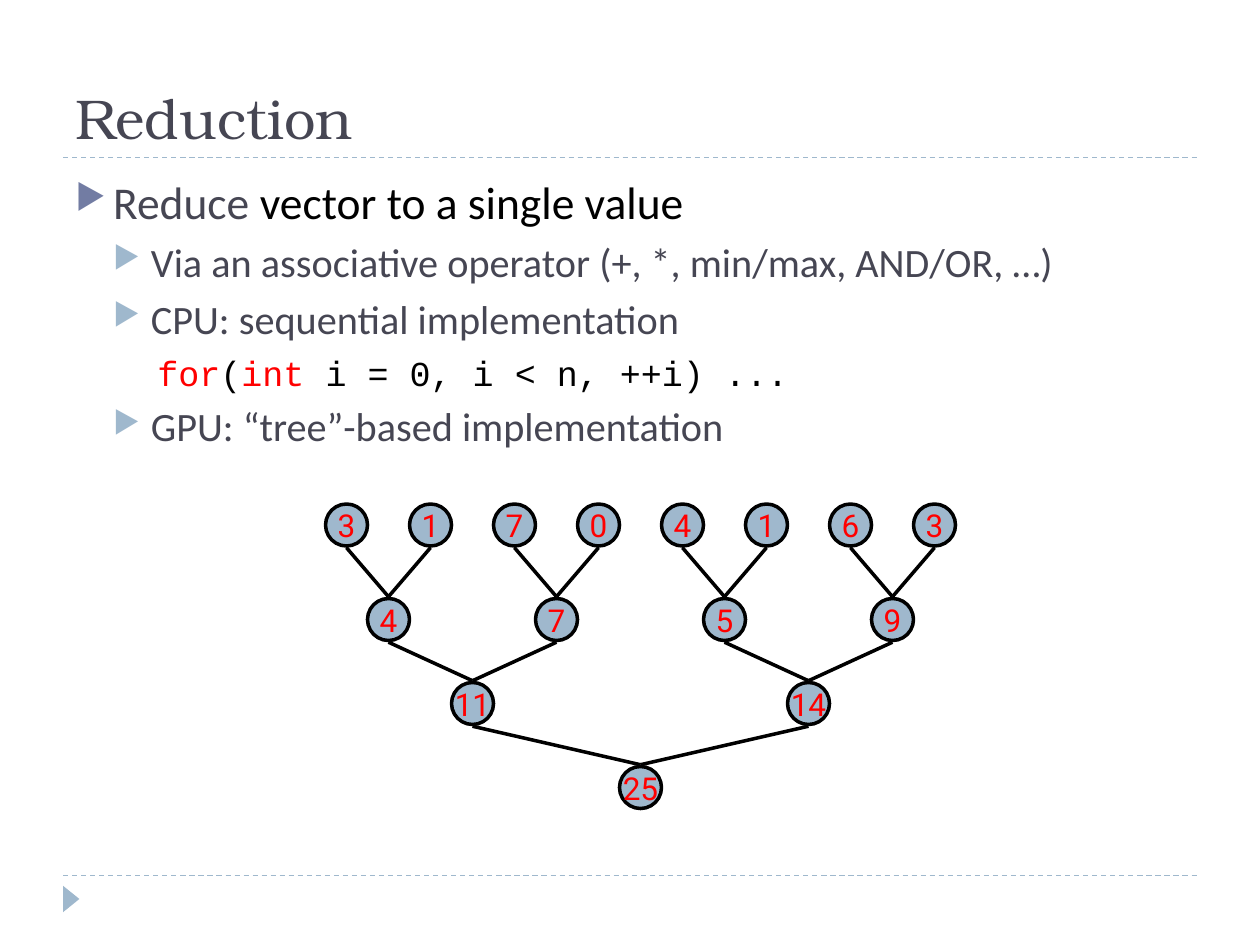
from dataclasses import dataclass
from typing import Optional

from lxml.etree import SubElement
from pptx import Presentation
from pptx.dml.color import RGBColor
from pptx.enum.dml import MSO_LINE
from pptx.enum.shapes import MSO_CONNECTOR, MSO_SHAPE
from pptx.enum.text import MSO_ANCHOR, MSO_AUTO_SIZE, PP_ALIGN
from pptx.oxml.ns import qn
from pptx.util import Pt


@dataclass(frozen=True)
class Theme:
    heading: str = "464653"
    ink: str = "000000"
    accent: str = "FF0000"
    bullet: str = "727CA3"
    pale: str = "9FB8CD"
    title_font: str = "TeX Gyre Bonum"
    body_font: str = "Calibri"
    code_font: str = "Courier New"
    node_font: str = "Roboto"
    title_size: float = 32
    level_sizes: tuple = (26, 23, 20)
    node_size: float = 18


THEME = Theme()


@dataclass(frozen=True)
class Line:
    """One paragraph of the body: (text, colour) runs at an outline level."""
    level: int
    runs: tuple
    left: float
    hanging: float
    space_before: float
    font: str = THEME.body_font
    bullet: Optional[str] = THEME.pale


@dataclass(frozen=True)
class TreeRow:
    top: float
    values: tuple
    preset: MSO_SHAPE = MSO_SHAPE.OVAL


def topic(text: str) -> Line:
    return Line(1, ((text, THEME.heading),), 43.2, 21.6, 5)


BODY = (
    Line(0, (("Reduce ", THEME.heading), ("vector to a single value", THEME.ink)),
         21.6, 21.6, 0, bullet=THEME.bullet),
    topic("Via an associative operator (+, *, min/max, AND/OR, …)"),
    topic("CPU: sequential implementation"),
    Line(2, (("for", THEME.accent), ("(", THEME.ink), ("int", THEME.accent),
             (" i = 0, i < n, ++i) ...", THEME.ink)),
         64.8, 18, 5, font=THEME.code_font, bullet=None),
    topic("GPU: “tree”-based implementation"),
)

TREE = (
    TreeRow(288, (3, 1, 7, 0, 4, 1, 6, 3), MSO_SHAPE.FLOWCHART_CONNECTOR),
    TreeRow(342, (4, 7, 5, 9)),
    TreeRow(390, (11, 14)),
    TreeRow(438, (25,)),
)
NODE = 24
FIRST_CENTER = 198
LEAF_STEP = 48
EDGE_GAP = 1


def style_font(font, name: str, size: float, color: str) -> None:
    for attribute, value in {"name": name, "size": Pt(size), "bold": False}.items():
        setattr(font, attribute, value)
    font.color.rgb = RGBColor.from_string(color)


def add_line(slide, start: tuple, end: tuple, color: str, width: float, dash=None) -> None:
    connector = slide.shapes.add_connector(
        MSO_CONNECTOR.STRAIGHT, *(Pt(value) for value in start + end))
    connector.line.color.rgb = RGBColor.from_string(color)
    connector.line.width = Pt(width)
    if dash is not None:
        connector.line.dash_style = dash
    SubElement(connector._element.spPr, qn("a:effectLst"))


def add_filled_shape(slide, preset, left: float, top: float, width: float, height: float):
    shape = slide.shapes.add_shape(preset, Pt(left), Pt(top), Pt(width), Pt(height))
    shape.shadow.inherit = False
    shape.fill.solid()
    shape.fill.fore_color.rgb = RGBColor.from_string(THEME.pale)
    return shape


def add_node(slide, preset, center: float, top: float, value: int) -> None:
    shape = add_filled_shape(slide, preset, center - NODE / 2, top, NODE, NODE)
    shape.line.color.rgb = RGBColor.from_string(THEME.ink)
    shape.line.width = Pt(2)
    frame = shape.text_frame
    frame.word_wrap = False
    frame.vertical_anchor = MSO_ANCHOR.MIDDLE
    paragraph = frame.paragraphs[0]
    paragraph.alignment = PP_ALIGN.CENTER
    run = paragraph.add_run()
    run.text = str(value)
    style_font(run.font, THEME.node_font, THEME.node_size, THEME.accent)


def format_paragraph(paragraph, line: Line) -> None:
    paragraph.level = line.level
    paragraph.space_before = Pt(line.space_before)
    properties = paragraph._p.get_or_add_pPr()
    properties.set("marL", str(Pt(line.left)))
    properties.set("indent", str(-Pt(line.hanging)))
    if line.bullet:
        color = SubElement(properties, qn("a:buClr"))
        SubElement(color, qn("a:srgbClr"), val=line.bullet)
        SubElement(properties, qn("a:buSzPct"), val="76000")
        SubElement(properties, qn("a:buChar"), char="▶")
    else:
        SubElement(properties, qn("a:buNone"))
    for text, run_color in line.runs:
        run = paragraph.add_run()
        run.text = text
        style_font(run.font, line.font, THEME.level_sizes[line.level], run_color)


def add_title(slide, text: str) -> None:
    title = slide.shapes.title
    box = {"left": 36, "top": 12.24, "width": 648, "height": 77.76}
    for attribute, value in box.items():
        setattr(title, attribute, Pt(value))
    frame = title.text_frame
    frame.text = text
    frame.auto_size = MSO_AUTO_SIZE.NONE
    frame.vertical_anchor = MSO_ANCHOR.BOTTOM
    paragraph = frame.paragraphs[0]
    paragraph.alignment = PP_ALIGN.LEFT
    style_font(paragraph.runs[0].font, THEME.title_font, THEME.title_size, THEME.heading)


def add_body(slide, lines: tuple) -> None:
    frame = slide.shapes.add_textbox(Pt(36), Pt(95.76), Pt(648), Pt(388.8)).text_frame
    frame.word_wrap = True
    for index, line in enumerate(lines):
        paragraph = frame.add_paragraph() if index else frame.paragraphs[0]
        format_paragraph(paragraph, line)


def add_tree(slide, rows: tuple) -> None:
    centers = [FIRST_CENTER + LEAF_STEP * index for index in range(len(rows[0].values))]
    for depth, row in enumerate(rows):
        for center, value in zip(centers, row.values):
            add_node(slide, row.preset, center, row.top, value)
        if depth + 1 == len(rows):
            break
        # Each pair of neighbours feeds the node midway below it
        sums = [(left + right) / 2 for left, right in zip(centers[::2], centers[1::2])]
        for index, center in enumerate(centers):
            add_line(slide, (center, row.top + NODE + EDGE_GAP),
                     (sums[index // 2], rows[depth + 1].top - EDGE_GAP), THEME.ink, 2)
        centers = sums


def main() -> None:
    presentation = Presentation()
    presentation.slide_width, presentation.slide_height = Pt(720), Pt(540)
    slide = presentation.slides.add_slide(presentation.slide_layouts[5])

    # Rules and corner marker
    for y in (500.4, 90):
        add_line(slide, (36, y), (684, y), THEME.pale, 0.75, MSO_LINE.DASH)
    marker = add_filled_shape(slide, MSO_SHAPE.ISOSCELES_TRIANGLE, 33.12, 509.04, 15.12, 9.36)
    marker.rotation = 90
    marker.line.fill.background()

    # Text, then the reduction tree
    add_title(slide, "Reduction")
    add_body(slide, BODY)
    add_tree(slide, TREE)
    presentation.save("out.pptx")


if __name__ == "__main__":
    main()
